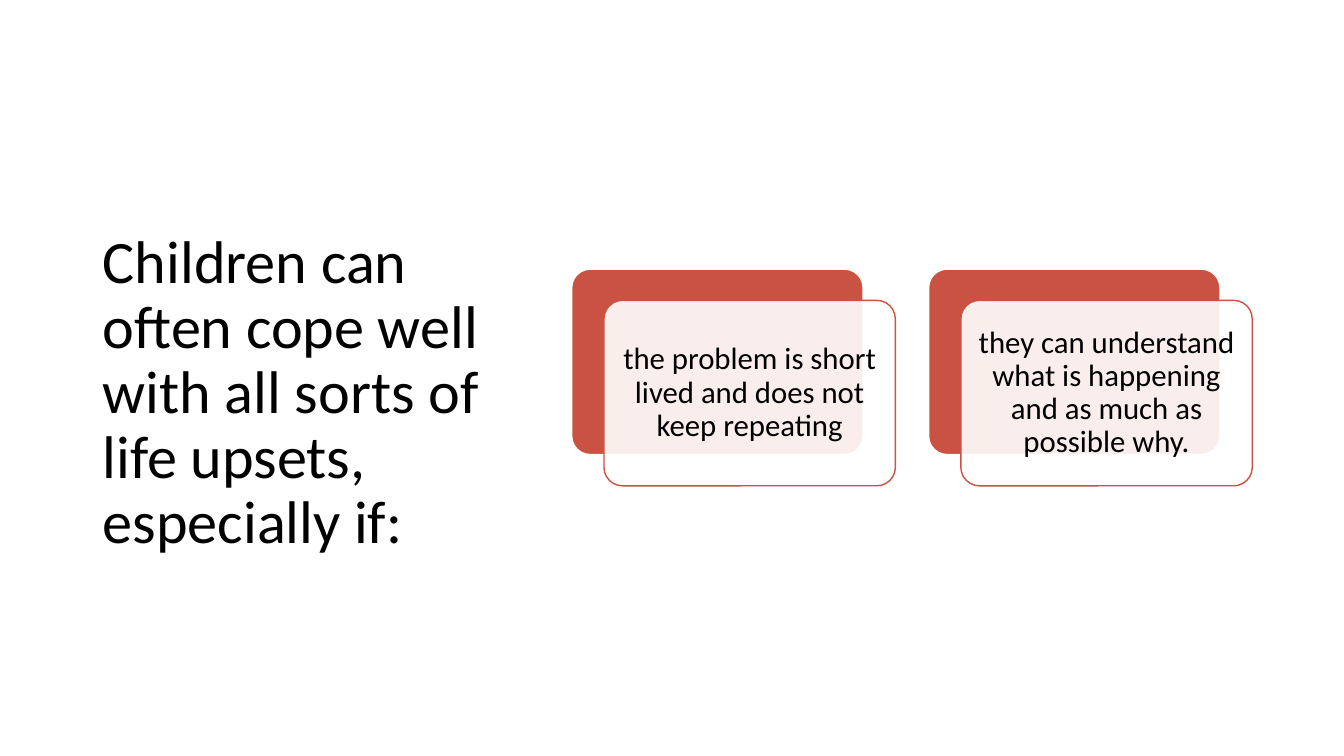
from lxml.etree import SubElement
from pptx import Presentation
from pptx.dml.color import RGBColor
from pptx.enum.shapes import MSO_SHAPE
from pptx.enum.text import MSO_ANCHOR, MSO_AUTO_SIZE, PP_ALIGN
from pptx.oxml.ns import qn
from pptx.util import Emu, Pt

EMU_PER_PX = 9144
COLORS = {"red": "C95242", "white": "FFFFFF", "black": "000000"}
REASONS = [
    "the problem is short lived and does not keep repeating",
    "they can understand what is happening and as much as possible why.",
]


def px(length):
    return Emu(length * EMU_PER_PX)


def color(name):
    return RGBColor.from_string(COLORS[name])


class SlideBuilder:
    font = "Calibri"

    def __init__(self, deck):
        self.page = deck.slides.add_slide(deck.slide_layouts[1])
        title = self.page.shapes.title
        title.element.getparent().remove(title.element)

    def add_text(self, para, text, size):
        para.line_spacing = 0.9
        span = para.add_run()
        span.text = text
        span.font.name = self.font
        span.font.size = Pt(size)
        span.font.color.rgb = color("black")

    def body(self, left, top, width, height, text, size):
        box = self.page.placeholders[1]
        box.left, box.top, box.width, box.height = map(px, (left, top, width, height))
        frame = box.text_frame
        frame.word_wrap = True
        frame.auto_size = MSO_AUTO_SIZE.NONE
        frame.vertical_anchor = MSO_ANCHOR.TOP
        para = frame.paragraphs[0]
        para.alignment = PP_ALIGN.LEFT
        para.space_before = Pt(10)
        self.add_text(para, text, size)
        properties = para._p.get_or_add_pPr()
        properties.set("marL", "0")
        properties.set("indent", "0")
        SubElement(properties, qn("a:buNone"))

    def panel(self, left, top, width, height, fill, line, opacity=100):
        box = self.page.shapes.add_shape(
            MSO_SHAPE.ROUNDED_RECTANGLE, *map(px, (left, top, width, height))
        )
        box.adjustments[0] = 0.1
        box.shadow.inherit = False
        box.fill.solid()
        box.fill.fore_color.rgb = color(fill)
        box.line.color.rgb = color(line)
        box.line.width = Pt(1)
        if opacity < 100:
            tint = box.element.spPr.find(qn("a:solidFill")).find(qn("a:srgbClr"))
            SubElement(tint, qn("a:alpha")).set("val", str(opacity * 1000))
        return box

    def card(self, left, top, width, height, text, size):
        self.panel(left, top, width, height, "red", "white")
        front = self.panel(left + 32, top + 31, width, height, "white", "red", 90)
        frame = front.text_frame
        frame.word_wrap = True
        frame.vertical_anchor = MSO_ANCHOR.MIDDLE
        frame.margin_left = frame.margin_right = px(9)
        frame.margin_top = frame.margin_bottom = px(9)
        para = frame.paragraphs[0]
        para.alignment = PP_ALIGN.CENTER
        self.add_text(para, text, size)


def main():
    deck = Presentation()
    deck.slide_width, deck.slide_height = px(1333), px(750)
    slide = SlideBuilder(deck)
    for index, reason in enumerate(REASONS):
        slide.card(567 + index * 354, 267, 289, 184, reason, 22)
    slide.body(
        92, 225, 430, 417,
        "Children can often cope well with all sorts of life upsets, especially if:",
        43,
    )
    deck.save("out.pptx")


if __name__ == "__main__":
    main()
